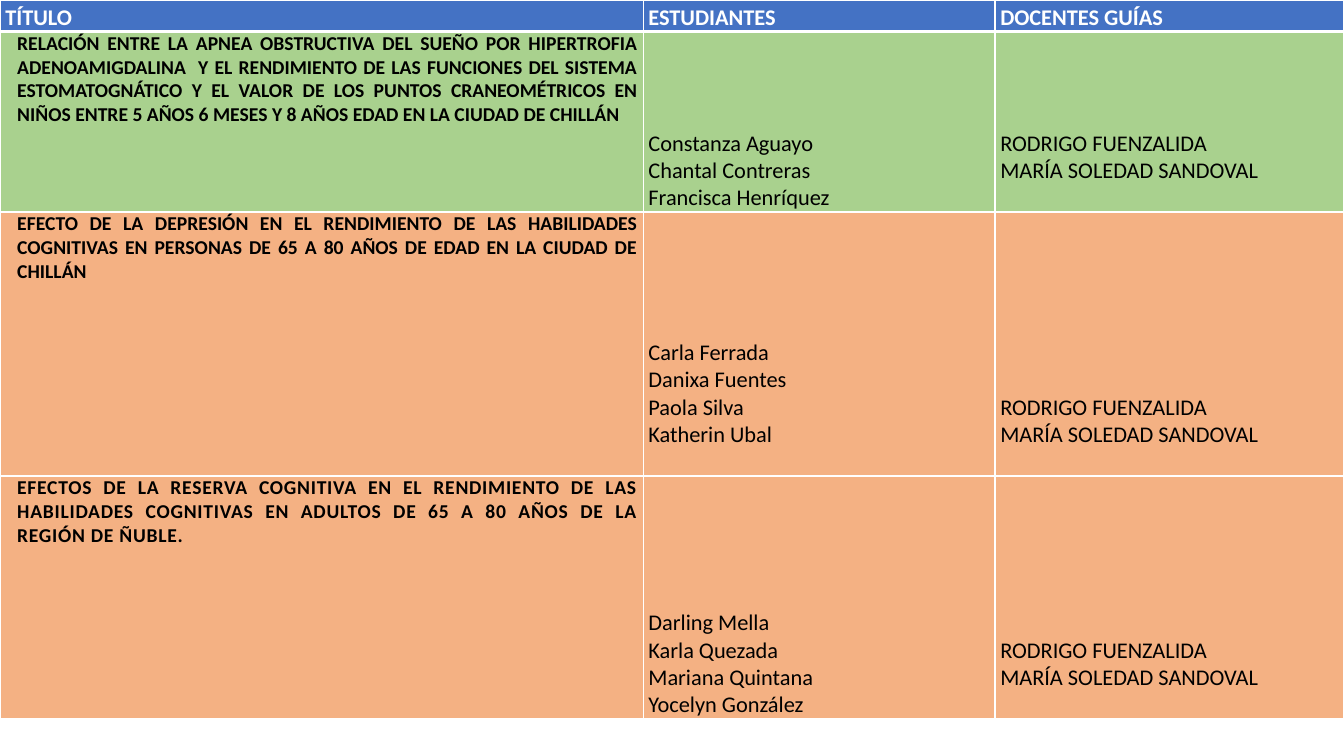
from pptx import Presentation
from pptx.util import Pt
from pptx.dml.color import RGBColor as Rgb
from pptx.enum.text import MSO_ANCHOR as Anchor, PP_ALIGN as Align
from pptx.oxml import parse_xml as to_xml
from pptx.oxml.ns import nsdecls

COLORS = {
    "head": "4472C4",
    "green": "A9D18E",
    "peach": "F4B183",
    "white": "FFFFFF",
    "black": "000000",
}
WIDTHS = [459.4, 251.3, 249.3]
HEADS = ["TÍTULO", "ESTUDIANTES", "DOCENTES GUÍAS"]
GUIDES = ["RODRIGO FUENZALIDA", "MARÍA SOLEDAD SANDOVAL"]
LINE = 19.5

THESES = [
    {
        "fill": "green",
        "high": 128.9,
        "title": "RELACIÓN ENTRE LA APNEA OBSTRUCTIVA DEL SUEÑO POR HIPERTROFIA "
        "ADENOAMIGDALINA  Y EL RENDIMIENTO DE LAS FUNCIONES DEL SISTEMA "
        "ESTOMATOGNÁTICO Y EL VALOR DE LOS PUNTOS CRANEOMÉTRICOS EN "
        "NIÑOS ENTRE 5 AÑOS 6 MESES Y 8 AÑOS EDAD EN LA CIUDAD DE CHILLÁN",
        "team": ["Constanza Aguayo", "Chantal Contreras", "Francisca Henríquez"],
        "gap": 0,
        "track": 0,
    },
    {
        "fill": "peach",
        "high": 188.6,
        "title": "EFECTO DE LA DEPRESIÓN EN EL RENDIMIENTO DE LAS HABILIDADES "
        "COGNITIVAS EN PERSONAS DE 65 A 80 AÑOS DE EDAD EN LA CIUDAD DE CHILLÁN",
        "team": ["Carla Ferrada", "Danixa Fuentes", "Paola Silva", "Katherin Ubal"],
        "gap": LINE,
        "track": 0,
    },
    {
        "fill": "peach",
        "high": 173.5,
        "title": "EFECTOS DE LA RESERVA COGNITIVA EN EL RENDIMIENTO DE LAS "
        "HABILIDADES COGNITIVAS EN ADULTOS DE 65 A 80 AÑOS DE LA REGIÓN DE ÑUBLE.",
        "team": ["Darling Mella", "Karla Quezada", "Mariana Quintana", "Yocelyn González"],
        "gap": 0,
        "track": 0.5,
    },
]


class Deck:
    font = "Calibri"

    def __init__(self):
        self.prs = Presentation()
        self.prs.slide_width = Pt(960)
        self.prs.slide_height = Pt(540)
        self.slide = self.prs.slides.add_slide(self.prs.slide_layouts[6])

    def table(self, widths, heights):
        frame = self.slide.shapes.add_table(
            len(heights), len(widths), 0, 0, Pt(sum(widths)), Pt(sum(heights))
        )
        grid = frame.table
        for col, wide in zip(grid.columns, widths):
            col.width = Pt(wide)
        for row, high in zip(grid.rows, heights):
            row.height = Pt(high)
        return grid

    def cell(self, cell, lines, fill, size=16, color="black", bold=False,
             anchor=Anchor.BOTTOM, align=None, indent=0, space=None,
             gap=0, track=0, top=1, base=1):
        cell.margin_left = cell.margin_right = Pt(3.8)
        cell.margin_top, cell.margin_bottom = 0, Pt(gap)
        cell.vertical_anchor = anchor
        cell.fill.solid()
        cell.fill.fore_color.rgb = Rgb.from_string(COLORS[fill])
        self.edges(cell, {"L": 1, "R": 1, "T": top, "B": base})
        frame = cell.text_frame
        for i, line in enumerate(lines):
            para = frame.add_paragraph() if i else frame.paragraphs[0]
            para.alignment = align
            para.line_spacing = space
            if indent:
                props = para._p.get_or_add_pPr()
                props.set("marL", str(int(Pt(indent))))
                props.set("indent", "0")
            run = para.add_run()
            run.text = line
            run.font.name = self.font
            run.font.size = Pt(size)
            run.font.bold = bold
            run.font.color.rgb = Rgb.from_string(COLORS[color])
            if track:
                run._r.get_or_add_rPr().set("spc", str(int(track * 100)))

    def edges(self, cell, sides):
        props = cell._tc.get_or_add_tcPr()
        for i, (side, wide) in enumerate(sides.items()):
            props.insert(i, to_xml(
                f'<a:ln{side} {nsdecls("a")} w="{int(Pt(wide))}"><a:solidFill>'
                f'<a:srgbClr val="{COLORS["white"]}"/></a:solidFill></a:ln{side}>'
            ))

    def save(self):
        self.prs.save("out.pptx")


def main():
    deck = Deck()
    grid = deck.table(WIDTHS, [22] + [item["high"] for item in THESES])
    for col, head in enumerate(HEADS):
        deck.cell(grid.cell(0, col), [head], "head", color="white",
                  bold=True, space=1.15, base=3)
    for row, item in enumerate(THESES, 1):
        fill = item["fill"]
        top = 3 if row == 1 else 1
        deck.cell(grid.cell(row, 0), [item["title"]], fill, size=14, bold=True,
                  anchor=Anchor.TOP, align=Align.JUSTIFY, indent=8.5,
                  track=item["track"], top=top)
        deck.cell(grid.cell(row, 1), item["team"], fill, gap=item["gap"], top=top)
        deck.cell(grid.cell(row, 2), GUIDES, fill, gap=LINE, top=top)
    deck.save()


if __name__ == "__main__":
    main()
